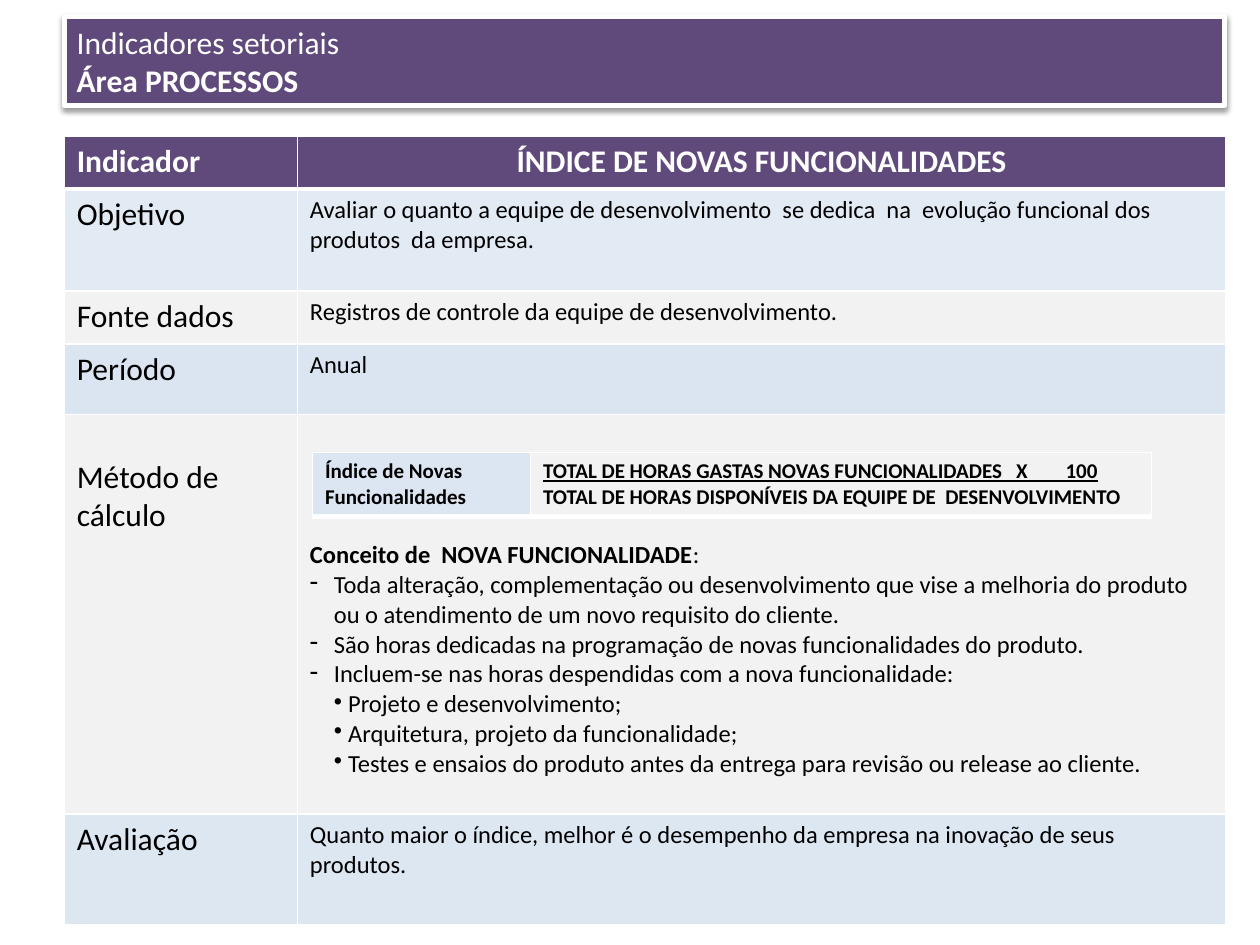
from dataclasses import dataclass

from lxml.etree import SubElement as Sub
from pptx import Presentation
from pptx.dml.color import RGBColor
from pptx.enum.shapes import MSO_SHAPE as Shape
from pptx.enum.text import MSO_ANCHOR as Anchor, PP_ALIGN as Align
from pptx.oxml.ns import qn
from pptx.util import Inches, Pt

PURPLE = RGBColor(0x60, 0x4A, 0x7B)
BLUE = RGBColor(0xB9, 0xCD, 0xE5)
PALE = RGBColor(0xDC, 0xE6, 0xF2)
GRAY = RGBColor(0xF2, 0xF2, 0xF2)
WHITE = RGBColor(0xFF, 0xFF, 0xFF)
BLACK = RGBColor(0, 0, 0)
FONT = "Calibri"
LEFT, WIDTH = Inches(0.51), Inches(9.21)


@dataclass
class Para:
    text: str
    size: int = 14
    bold: bool = False
    color: RGBColor = BLACK
    align: Align = Align.LEFT
    line: bool = False
    bullet: str = ""
    hang: float = 0
    tail: str = ""


@dataclass
class Cell:
    paras: list[Para]
    fill: RGBColor | None = GRAY
    alpha: int = 100
    base: int = 1
    top: float = 0.05


def write(frame, paras: list[Para]) -> None:
    """Put the paragraphs into a text frame, with fonts and bullets."""
    for i, item in enumerate(paras):
        para = frame.paragraphs[0] if i == 0 else frame.add_paragraph()
        para.alignment = item.align
        font = para.font
        font.name, font.size, font.bold = FONT, Pt(item.size), item.bold
        font.underline = item.line
        font.color.rgb = item.color
        for text, bold in ((item.text, item.bold), (item.tail, False)):
            if text:
                run = para.add_run()
                run.text = text
                run.font.name, run.font.size = FONT, Pt(item.size)
                run.font.bold, run.font.underline = bold, item.line
                run.font.color.rgb = item.color
        if item.bullet:
            props = para._p.get_or_add_pPr()
            props.set("marL", str(Inches(0.19)))
            props.set("indent", str(Inches(item.hang)))
            mark = props.makeelement(qn("a:buChar"), {"char": item.bullet})
            props.insert_element_before(mark, "a:tabLst", "a:defRPr", "a:extLst")


def border(cell, base: int) -> None:
    """Draw white cell borders; base is the width of the bottom one."""
    props = cell._tc.get_or_add_tcPr()
    for side, width in (("L", 1), ("R", 1), ("T", 1), ("B", base)):
        edge = Sub(props, qn(f"a:ln{side}"), w=str(Pt(width)))
        Sub(Sub(edge, qn("a:solidFill")), qn("a:srgbClr"), val=str(WHITE))


def paint(cell, data: Cell) -> None:
    if data.fill is None:
        cell.fill.background()
        return
    cell.fill.solid()
    cell.fill.fore_color.rgb = data.fill
    if data.alpha < 100:
        tone = cell._tc.tcPr.find(qn("a:solidFill"))[0]
        Sub(tone, qn("a:alpha"), val=str(data.alpha * 1000))


def draw_table(slide, left: int, top: int, cols: list[float],
               rows: list[float], cells: list[list[Cell]]) -> None:
    table = slide.shapes.add_table(len(rows), len(cols), left, top,
                                   Inches(sum(cols)), Inches(sum(rows))).table
    table.first_row = table.horz_banding = False
    for col, width in zip(table.columns, cols):
        col.width = Inches(width)
    for row, height, line in zip(table.rows, rows, cells):
        row.height = Inches(height)
        for cell, data in zip(row.cells, line):
            cell.margin_top = Inches(data.top)
            border(cell, data.base)
            paint(cell, data)
            write(cell.text_frame, data.paras)


def draw_title(slide, paras: list[Para]) -> None:
    box = slide.shapes.add_shape(Shape.RECTANGLE, LEFT, Inches(0.13),
                                 WIDTH, Inches(0.71))
    box.fill.solid()
    box.fill.fore_color.rgb = PURPLE
    box.line.color.rgb = WHITE
    box.line.width = Pt(3)
    box.shadow.inherit = False
    effects = box._element.spPr.find(qn("a:effectLst"))
    shade = Sub(effects, qn("a:outerShdw"), blurRad=str(Pt(3.1)),
                dist=str(Pt(1.6)), dir="5400000", rotWithShape="0")
    Sub(Sub(shade, qn("a:srgbClr"), val=str(BLACK)), qn("a:alpha"), val="38000")
    box.text_frame.word_wrap = True
    box.text_frame.vertical_anchor = Anchor.MIDDLE
    write(box.text_frame, paras)


def head(text: str, align: Align = Align.LEFT) -> Cell:
    return Cell([Para(text, 18, True, WHITE, align)], PURPLE, base=3)


def pair(label: str, text: str, fill: RGBColor = GRAY,
         alpha: int = 100) -> list[Cell]:
    """A table row with a label and one paragraph."""
    return [Cell([Para(label, 18)], fill, alpha), Cell([Para(text)], fill, alpha)]


DASHES = [
    "Toda alteração, complementação ou desenvolvimento que vise a melhoria do "
    "produto ou o atendimento de um novo requisito do cliente.",
    "São horas dedicadas na programação de novas funcionalidades do produto.",
    "Incluem-se nas horas despendidas com a nova funcionalidade:",
]
DOTS = [
    " Projeto e desenvolvimento;",
    " Arquitetura, projeto da funcionalidade;",
    " Testes e ensaios do produto antes da entrega para revisão ou release ao cliente.",
]
CONCEPT = [Para("Conceito de  NOVA FUNCIONALIDADE", bold=True, tail=":"),
           *(Para(text, bullet="-", hang=-0.19) for text in DASHES),
           *(Para(text, bullet="•") for text in DOTS)]
MAIN = [
    [head("Indicador"), head("ÍNDICE DE NOVAS FUNCIONALIDADES", Align.CENTER)],
    pair("Objetivo", "Avaliar o quanto a equipe de desenvolvimento  se dedica  na  "
         "evolução funcional dos produtos  da empresa.", BLUE, 41),
    pair("Fonte dados", "Registros de controle da equipe de desenvolvimento."),
    pair("Período", "Anual", BLUE, 51),
    [Cell([Para("Método de cálculo", 18)], top=0.35), Cell(CONCEPT, top=1)],
    pair("Avaliação", "Quanto maior o índice, melhor é o desempenho da empresa na "
         "inovação de seus produtos.", BLUE, 48),
]
RATIO = [[
    Cell([Para("Índice de Novas Funcionalidades", 12, True)], PALE, base=3),
    Cell([Para("TOTAL DE HORAS GASTAS NOVAS FUNCIONALIDADES   X        100",
               12, True, line=True),
          Para("TOTAL DE HORAS DISPONÍVEIS DA EQUIPE DE  DESENVOLVIMENTO",
               12, True)], None, base=3),
]]


def main() -> None:
    deck = Presentation()
    deck.slide_width, deck.slide_height = Inches(10), Inches(7.5)
    slide = deck.slides.add_slide(deck.slide_layouts[6])
    draw_table(slide, LEFT, Inches(1.08), [1.85, 7.37],
               [0.42, 0.81, 0.42, 0.56, 3.17, 0.88], MAIN)
    draw_title(slide, [Para("Indicadores setoriais", 18, color=WHITE),
                       Para("Área PROCESSOS", 18, True, WHITE)])
    draw_table(slide, Inches(2.48), Inches(3.59), [1.73, 4.93], [0.5], RATIO)
    deck.save("out.pptx")


if __name__ == "__main__":
    main()
